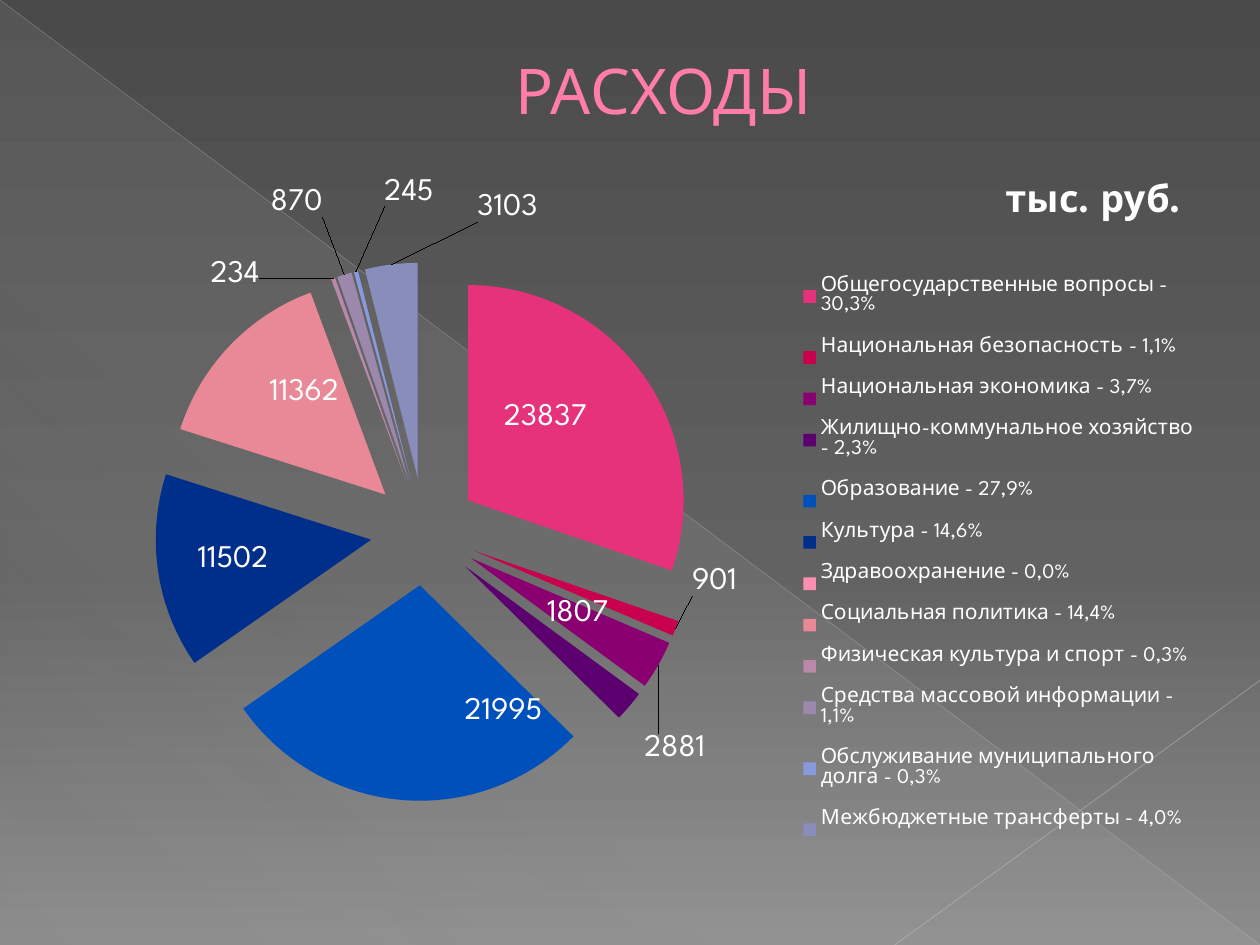
from math import cos, pi, sin

from lxml import etree
from pptx import Presentation
from pptx.chart.data import CategoryChartData
from pptx.dml.color import RGBColor
from pptx.enum.chart import XL_CHART_TYPE, XL_LABEL_POSITION, XL_LEGEND_POSITION
from pptx.enum.shapes import MSO_CONNECTOR, MSO_SHAPE
from pptx.enum.text import MSO_ANCHOR, PP_ALIGN
from pptx.oxml import parse_xml
from pptx.oxml.ns import nsdecls, qn
from pptx.util import Inches, Pt

PIE = XL_CHART_TYPE.PIE_EXPLODED
LABEL_CENTER = XL_LABEL_POSITION.CENTER
LEGEND_RIGHT = XL_LEGEND_POSITION.RIGHT
STRAIGHT = MSO_CONNECTOR.STRAIGHT
RIGHT_TRIANGLE = MSO_SHAPE.RIGHT_TRIANGLE
MIDDLE = MSO_ANCHOR.MIDDLE
CENTER = PP_ALIGN.CENTER

WIDTH, HEIGHT = Inches(10), Inches(7.5)
EXPLOSION = 25

# category, value, colour, centre of its label in percent of the chart
EXPENSES = [
    ("Общегосударственные вопросы - 30,3%", 23837, "E5327B", (43.3, 35.3)),
    ("Национальная безопасность - 1,1%", 901, "C8004E", (57.8, 57.9)),
    ("Национальная экономика - 3,7%", 2881, "8A0070", (54.4, 80.8)),
    ("Жилищно-коммунальное хозяйство - 2,3%", 1807, "5C0070", (46.1, 62.2)),
    ("Образование - 27,9%", 21995, "0050BB", (39.7, 75.7)),
    ("Культура - 14,6%", 11502, "002E8B", (16.7, 54.8)),
    ("Здравоохранение - 0,0%", 0, "FF8FB0", None),
    ("Социальная политика - 14,4%", 11362, "E98896", (22.7, 31.9)),
    ("Физическая культура и спорт - 0,3%", 234, "BA88A8", (16.8, 15.7)),
    ("Средства массовой информации - 1,1%", 870, "9C88AC", (22.1, 5.8)),
    ("Обслуживание муниципального долга - 0,3%", 245, "8899DD", (31.7, 4.3)),
    ("Межбюджетные трансферты - 4,0%", 3103, "888DBC", (40.1, 6.5)),
]


def color(value):
    return RGBColor.from_string(value)


def gradient(stops, angle):
    """Return a gradFill element; each stop is (position %, colour, opacity %)."""
    stop_xml = "".join(
        f'<a:gs pos="{position * 1000}"><a:srgbClr val="{value}">'
        f'<a:alpha val="{opacity * 1000}"/></a:srgbClr></a:gs>'
        for position, value, opacity in stops)
    return parse_xml(
        f'<a:gradFill {nsdecls("a")} rotWithShape="1"><a:gsLst>{stop_xml}</a:gsLst>'
        f'<a:lin ang="{angle * 60000}" scaled="0"/></a:gradFill>')


def replace_solid_fill(properties, fill):
    properties.replace(properties.find(qn("a:solidFill")), fill)


def set_layout(parent, index, x, y, width=None, height=None, inner=False):
    """Give a chart part a manual layout as its child number index."""
    for old in parent.findall(qn("c:layout")):
        parent.remove(old)
    layout = etree.Element(qn("c:layout"))
    manual = etree.SubElement(layout, qn("c:manualLayout"))
    settings = [("layoutTarget", "inner")] if inner else []
    if parent.tag != qn("c:dLbl"):
        settings += [("xMode", "edge"), ("yMode", "edge")]
    settings += [("x", x), ("y", y), ("w", width), ("h", height)]
    for name, value in settings:
        if value is not None:
            etree.SubElement(manual, qn(f"c:{name}")).set("val", str(value))
    parent.insert(index, layout)


def format_font(font, name, size, value, bold=False):
    font.name, font.size, font.bold = name, Pt(size), bold
    font.color.rgb = color(value)


def write_text(frame, text, outline=None, **font_format):
    """Write one run and return its paragraph; outline is (colour, points)."""
    paragraph = frame.paragraphs[0]
    run = paragraph.add_run()
    run.text = text
    format_font(run.font, **font_format)
    if outline:
        value, width = outline
        run.font.fill.solid()
        run.font.color.rgb = color(font_format["value"])
        run_properties = run._r.get_or_add_rPr()
        run_properties.insert(0, parse_xml(
            f'<a:ln {nsdecls("a")} w="{Pt(width)}"><a:solidFill>'
            f'<a:srgbClr val="{value}"/></a:solidFill></a:ln>'))
    return paragraph


class ExpensesSlide:
    """Style and current slide; lengths are shares of the slide's size."""

    font = "League Spartan"
    text_color = "FFFFFF"
    title_color = "FF7DA7"
    title_outline = ("B12761", 0.5)

    def __init__(self, presentation):
        self.slide = presentation.slides.add_slide(presentation.slide_layouts[6])
        self.shapes = self.slide.shapes

    def box(self, x, y, width, height):
        return (round(x * WIDTH), round(y * HEIGHT),
                round(width * WIDTH), round(height * HEIGHT))

    def background(self, stops, angle):
        self.slide.background.fill.solid()
        properties = self.slide.element.find(".//" + qn("p:bgPr"))
        replace_solid_fill(properties, gradient(stops, angle))

    def triangle(self, box, stops, angle):
        shape = self.shapes.add_shape(RIGHT_TRIANGLE, *self.box(*box))
        shape.shadow.inherit = False
        shape.line.fill.background()
        shape.fill.solid()
        replace_solid_fill(shape.element.spPr, gradient(stops, angle))

    def line(self, start, end, value, width, opacity):
        connector = self.shapes.add_connector(STRAIGHT, *self.box(*start, *end))
        connector.line.color.rgb = color(value)
        connector.line.width = Pt(width)
        properties = connector.element.spPr
        rgb = properties.find(".//" + qn("a:srgbClr"))
        etree.SubElement(rgb, qn("a:alpha")).set("val", str(opacity * 1000))
        etree.SubElement(properties, qn("a:effectLst"))

    def title(self, text, box, indent):
        frame = self.shapes.add_textbox(*self.box(*box)).text_frame
        frame.word_wrap = True
        frame.vertical_anchor = MIDDLE
        paragraph = write_text(frame, text, self.title_outline, name=self.font,
                               size=36, value=self.title_color)
        paragraph.alignment = CENTER
        paragraph._p.get_or_add_pPr().set("marL", str(Inches(indent)))

    def pie(self, box, title, rows, plot_area):
        data = CategoryChartData(number_format="0")
        data.categories = [row[0] for row in rows]
        data.add_series("Series 1", [row[1] for row in rows])
        frame = self.shapes.add_chart(PIE, *self.box(*box), data)
        chart = frame.chart
        format_font(chart.font, self.font, 18, self.text_color)

        chart.has_title = True
        write_text(chart.chart_title.text_frame, title, name=self.font,
                   size=21.6, value=self.text_color, bold=True)
        chart.chart_title.include_layout = False
        set_layout(chart.chart_title._element, 1, 0.82, 0.02)

        chart.has_legend = True
        chart.legend.position = LEGEND_RIGHT
        chart.legend.include_in_layout = False
        format_font(chart.legend.font, self.font, 12, self.text_color)
        set_layout(chart.legend._element, 1, 0.65, 0.13, 0.34, 0.82)

        plot = chart.plots[0]
        plot.vary_by_categories = True
        set_layout(plot._element.getparent(), 0, *plot_area, inner=True)
        self.slices(plot.series[0], rows, plot_area, frame.height / frame.width)

    def slices(self, series, rows, plot_area, aspect):
        """Colour the slices and move each label from its slice's middle."""
        element = series._element
        for old in element.findall(qn("c:explosion")):
            old.getparent().remove(old)
        explosion = etree.Element(qn("c:explosion"))
        explosion.set("val", str(EXPLOSION))
        element.find(qn("c:tx")).addnext(explosion)

        labels = series.data_labels
        labels.show_value = True
        labels.position = LABEL_CENTER
        labels.number_format = "0;;"
        labels.number_format_is_linked = False
        format_font(labels.font, self.font, 18, self.text_color)

        left, top, width, height = plot_area
        push = EXPLOSION / 100
        reach = height / 2 * (0.5 + push) / (1 + push)
        total, passed = sum(row[1] for row in rows), 0
        for index, (_, amount, value, label_center) in enumerate(rows):
            point = series.points[index]
            point.format.fill.solid()
            point.format.fill.fore_color.rgb = color(value)
            point.format.line.fill.background()
            angle = 2 * pi * (passed + amount / 2) / total
            passed += amount
            if label_center is None:
                continue
            point.data_label.position = LABEL_CENTER
            label = element.find(f".//{qn('c:dLbl')}/{qn('c:idx')}[@val='{index}']").getparent()
            x, y = (share / 100 for share in label_center)
            set_layout(label, 1,
                       round(x - left - width / 2 - reach * aspect * sin(angle), 3),
                       round(y - top - height / 2 + reach * cos(angle), 3))


def main():
    presentation = Presentation()
    presentation.slide_width, presentation.slide_height = WIDTH, HEIGHT
    page = ExpensesSlide(presentation)
    page.background([(0, "4A4A4A", 100), (60, "626262", 100), (100, "8C8C8C", 100)], 90)
    page.triangle((0, 0, 1, 1), [(0, "D2D2D2", 10), (70, "D2D2D2", 8), (100, "D2D2D2", 1)], 133)
    page.line((0, 0), (1, 1), "BFBFBF", 0.39, 35)
    page.line((1, 0.72), (0.71, 1), "C6C6C6", 0.47, 45)
    page.title("РАСХОДЫ", (0.05, 0.04, 0.9, 0.11), indent=0.53)
    page.pie((0.03, 0.17, 0.93, 0.77), "тыс. руб.", EXPENSES, (0.01, 0.14, 0.64, 0.74))
    presentation.save("out.pptx")


if __name__ == "__main__":
    main()
